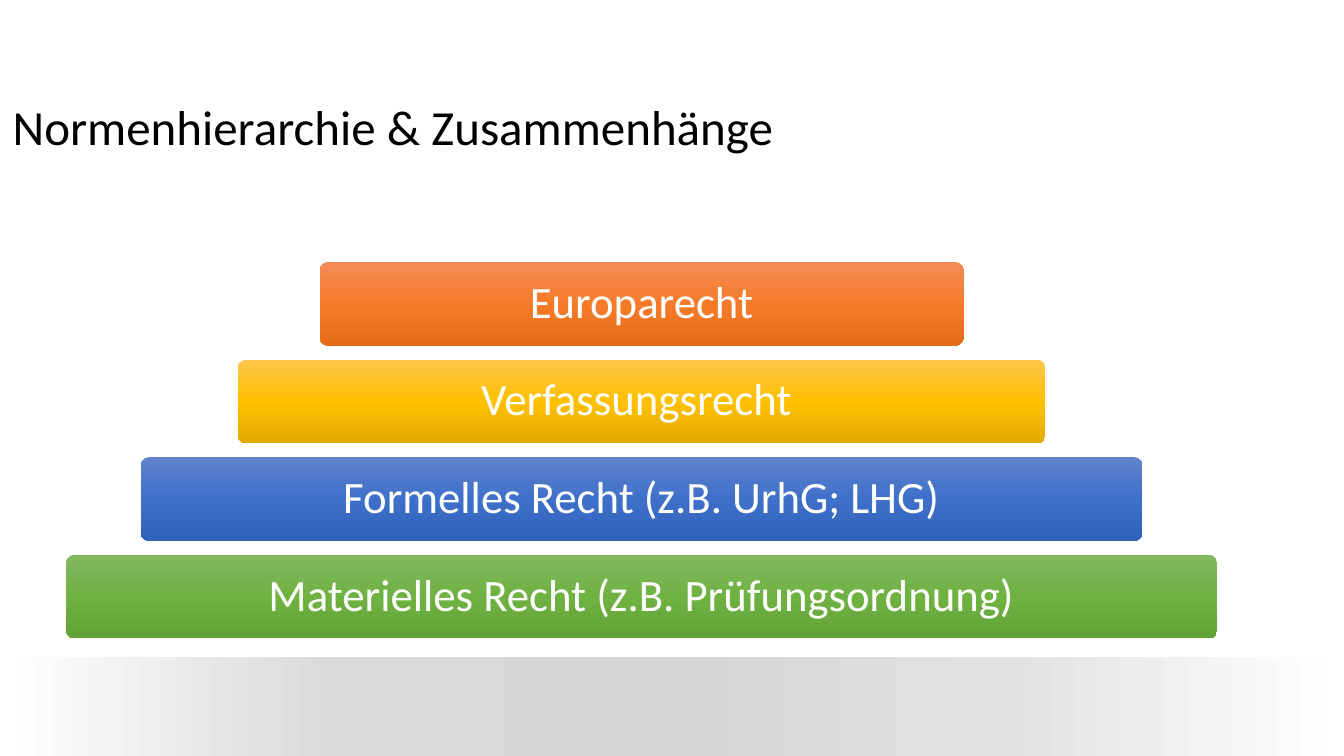
from lxml import etree
from pptx import Presentation
from pptx.dml.color import RGBColor
from pptx.enum.shapes import MSO_SHAPE
from pptx.enum.text import MSO_ANCHOR, MSO_AUTO_SIZE, PP_ALIGN
from pptx.oxml.ns import qn
from pptx.util import Cm, Pt

RECTANGLE = MSO_SHAPE.RECTANGLE
ROUNDED = MSO_SHAPE.ROUNDED_RECTANGLE
MIDDLE = MSO_ANCHOR.MIDDLE
GROW = MSO_AUTO_SIZE.SHAPE_TO_FIT_TEXT
LEFT, CENTER = PP_ALIGN.LEFT, PP_ALIGN.CENTER

FONT = "Calibri"
CENTRE_X = 16.17
FIRST_TOP = 6.6
LEVEL_HEIGHT = 2.11
LEVEL_PITCH = 2.46
LEVELS = [
    ("Europarecht", 16.23, ["F18C57", "F67B28", "E56C19"]),
    ("Verfassungsrecht ", 20.35, ["FFC64B", "FFC000", "E3AB00"]),
    ("Formelles Recht (z.B. UrhG; LHG)", 25.25, ["6183CB", "3E70CA", "3062BB"]),
    ("Materielles Recht (z.B. Prüfungsordnung)", 29.01, ["81B861", "6FB242", "62A336"]),
]
FOOTER_COLOURS = ["FFFFFF", "DADADA", "D6D6D6", "E2E2E2", "FFFFFF"]


def colour(hex_code):
    return RGBColor.from_string(hex_code)


def fill_gradient(shape, colours, angle):
    shape.fill.gradient()
    shape.fill.gradient_angle = angle
    stops = shape._element.spPr.find(qn("a:gradFill")).find(qn("a:gsLst"))
    for old_stop in list(stops):
        stops.remove(old_stop)
    for index, hex_code in enumerate(colours):
        position = round(100000 * index / (len(colours) - 1))
        stop = etree.SubElement(stops, qn("a:gs"), pos=str(position))
        etree.SubElement(stop, qn("a:srgbClr"), val=hex_code)


def write_text(shape, text, size, text_colour, align, margins, indent=0, wrap=True):
    frame = shape.text_frame
    frame.word_wrap = wrap
    frame.vertical_anchor = MIDDLE
    (frame.margin_left, frame.margin_top,
     frame.margin_right, frame.margin_bottom) = [Cm(margin) for margin in margins]
    paragraph = frame.paragraphs[0]
    paragraph.alignment = align
    paragraph.line_spacing = 0.9
    paragraph.space_before = Pt(0)
    if indent:
        paragraph._p.get_or_add_pPr().set("indent", str(Cm(indent)))
    run = paragraph.add_run()
    run.text = text
    run.font.size = Pt(size)
    run.font.name = FONT
    run.font.color.rgb = colour(text_colour)
    return run


def add_block(slide, kind, left, top, width, height, colours, angle):
    block = slide.shapes.add_shape(kind, Cm(left), Cm(top), Cm(width), Cm(height))
    block.shadow.inherit = False
    block.line.fill.background()
    fill_gradient(block, colours, angle)
    return block


def add_level(slide, row, text, width, colours):
    level = add_block(slide, ROUNDED, CENTRE_X - width / 2, FIRST_TOP + row * LEVEL_PITCH,
                      width, LEVEL_HEIGHT, colours, 270)
    level.adjustments[0] = 0.1
    write_text(level, text, 32, "FFFFFF", CENTER, [0.4] * 4)


def add_text_shadow(run):
    effects = etree.Element(qn("a:effectLst"))
    shadow = etree.SubElement(effects, qn("a:outerShdw"), blurRad="38100",
                              dist="38100", dir="2700000", algn="tl")
    shade = etree.SubElement(shadow, qn("a:srgbClr"), val="000000")
    etree.SubElement(shade, qn("a:alpha"), val="43000")
    run.font._element.find(qn("a:solidFill")).addnext(effects)


def place_title(slide, text):
    title = slide.shapes.title
    title.left, title.top, title.width, title.height = Cm(-0.18), Cm(2.46), Cm(20.35), Cm(1.6)
    run = write_text(title, text, 35, "000000", LEFT, [0.25, 0.13, 0.5, 0.13],
                     indent=0.25, wrap=False)
    title.text_frame.auto_size = GROW
    add_text_shadow(run)


def main():
    presentation = Presentation()
    presentation.slide_width, presentation.slide_height = Cm(33.87), Cm(19.05)
    slide = presentation.slides.add_slide(presentation.slide_layouts[5])
    add_block(slide, RECTANGLE, 0, 16.56, 33.87, 2.77, FOOTER_COLOURS, 0)
    place_title(slide, "Normenhierarchie & Zusammenhänge")
    for row, (text, width, colours) in enumerate(LEVELS):
        add_level(slide, row, text, width, colours)
    presentation.save("out.pptx")


if __name__ == "__main__":
    main()
